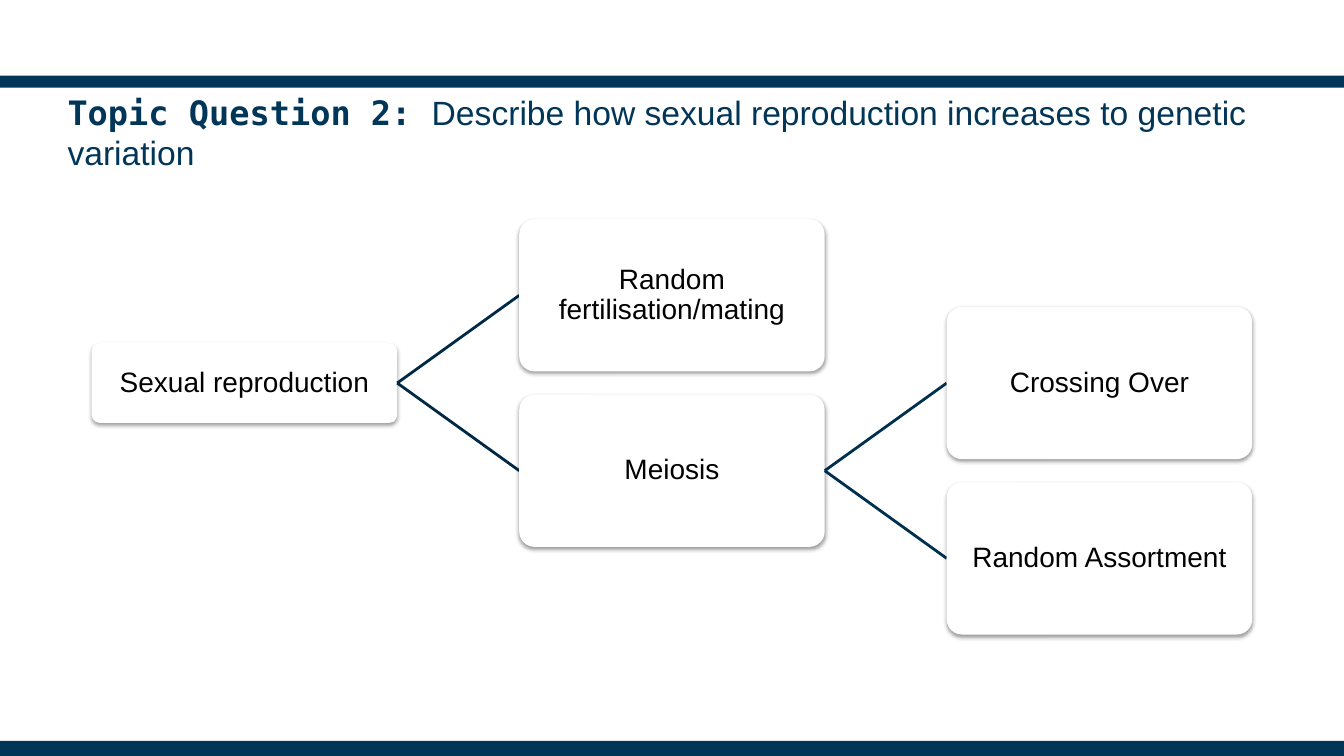
from lxml.etree import SubElement
from pptx import Presentation
from pptx.dml.color import RGBColor
from pptx.enum.shapes import MSO_CONNECTOR, MSO_SHAPE
from pptx.enum.text import MSO_ANCHOR, PP_ALIGN
from pptx.oxml.ns import qn
from pptx.util import Inches, Pt

TITLE_RUNS = [
    ("Topic Question 2: ", "DejaVu Sans Mono", True),
    ("Describe how sexual reproduction increases to genetic variation", "Arial", False),
]
# Each node: label, box height, colour of its branches, children
TREE = ("Sexual reproduction", 0.79, "first_branch", [
    ("Random fertilisation/mating", 1.51, None, []),
    ("Meiosis", 1.51, "second_branch", [
        ("Crossing Over", 1.51, None, []),
        ("Random Assortment", 1.51, None, []),
    ]),
])
BANDS = [(0.75, 0.12), (7.35, 0.15)]
COLORS = {
    "navy": "013658",
    "first_branch": "002945",
    "second_branch": "00304F",
    "box": "FFFFFF",
    "text": "000000",
    "shadow": "000000",
}
SLIDE_WIDTH, SLIDE_HEIGHT = 13.33, 7.5
TREE_LEFT, TREE_CENTER = 0.91, 3.8
BOX_WIDTH, COLUMN_STEP, ROW_STEP = 3.03, 4.24, 1.74


def color(name):
    return RGBColor.from_string(COLORS[name])


def add_run(paragraph, text, font_name, size, color_name, bold=False):
    run = paragraph.add_run()
    run.text = text
    run.font.name = font_name
    run.font.size = Pt(size)
    run.font.bold = bold
    run.font.color.rgb = color(color_name)


def set_up_frame(shape, margin):
    frame = shape.text_frame
    frame.word_wrap = True
    frame.vertical_anchor = MSO_ANCHOR.MIDDLE
    frame.margin_left = frame.margin_right = Inches(margin)
    frame.margin_top = frame.margin_bottom = Inches(margin)
    return frame.paragraphs[0]


def add_filled_shape(slide, kind, left, top, width, height, color_name):
    shape = slide.shapes.add_shape(
        kind, Inches(left), Inches(top), Inches(width), Inches(height))
    shape.fill.solid()
    shape.fill.fore_color.rgb = color(color_name)
    shape.line.fill.background()
    shape.shadow.inherit = False
    return shape


def add_soft_shadow(shape):
    effects = shape.element.spPr.find(qn("a:effectLst"))
    shadow = SubElement(effects, qn("a:outerShdw"), blurRad=str(Pt(3.1)),
                        dist=str(Pt(1.6)), dir="5400000", rotWithShape="0")
    shade = SubElement(shadow, qn("a:srgbClr"), val=COLORS["shadow"])
    SubElement(shade, qn("a:alpha"), val="38000")


def add_branch(slide, start, end, color_name):
    points = [Inches(value) for value in start + end]
    connector = slide.shapes.add_connector(MSO_CONNECTOR.STRAIGHT, *points)
    connector.line.color.rgb = color(color_name)
    connector.line.width = Pt(2)
    SubElement(connector.element.spPr, qn("a:effectLst"))


def add_node(slide, node, left, center):
    """Draw a node and, one column to the right, its children."""
    label, height, branch_color, children = node
    box = add_filled_shape(slide, MSO_SHAPE.ROUNDED_RECTANGLE, left,
                           center - height / 2, BOX_WIDTH, height, "box")
    box.adjustments[0] = 0.1
    add_soft_shadow(box)
    paragraph = set_up_frame(box, 0.05)
    paragraph.alignment = PP_ALIGN.CENTER
    paragraph.line_spacing = 0.9
    add_run(paragraph, label, "Arial", 20, "text")

    child_left = left + COLUMN_STEP
    for index, child in enumerate(children):
        child_center = center + (index - (len(children) - 1) / 2) * ROW_STEP
        add_branch(slide, (left + BOX_WIDTH, center),
                   (child_left, child_center), branch_color)
        add_node(slide, child, child_left, child_center)


def main():
    presentation = Presentation()
    presentation.slide_width = Inches(SLIDE_WIDTH)
    presentation.slide_height = Inches(SLIDE_HEIGHT)
    slide = presentation.slides.add_slide(presentation.slide_layouts[6])

    for top, height in BANDS:
        add_filled_shape(slide, MSO_SHAPE.RECTANGLE, 0, top,
                         SLIDE_WIDTH, height, "navy")

    title = slide.shapes.add_textbox(
        Inches(0.67), Inches(0.92), Inches(12), Inches(0.78))
    paragraph = set_up_frame(title, 0)
    for text, font_name, bold in TITLE_RUNS:
        add_run(paragraph, text, font_name, 24, "navy", bold)

    add_node(slide, TREE, TREE_LEFT, TREE_CENTER)
    presentation.save("out.pptx")


if __name__ == "__main__":
    main()
